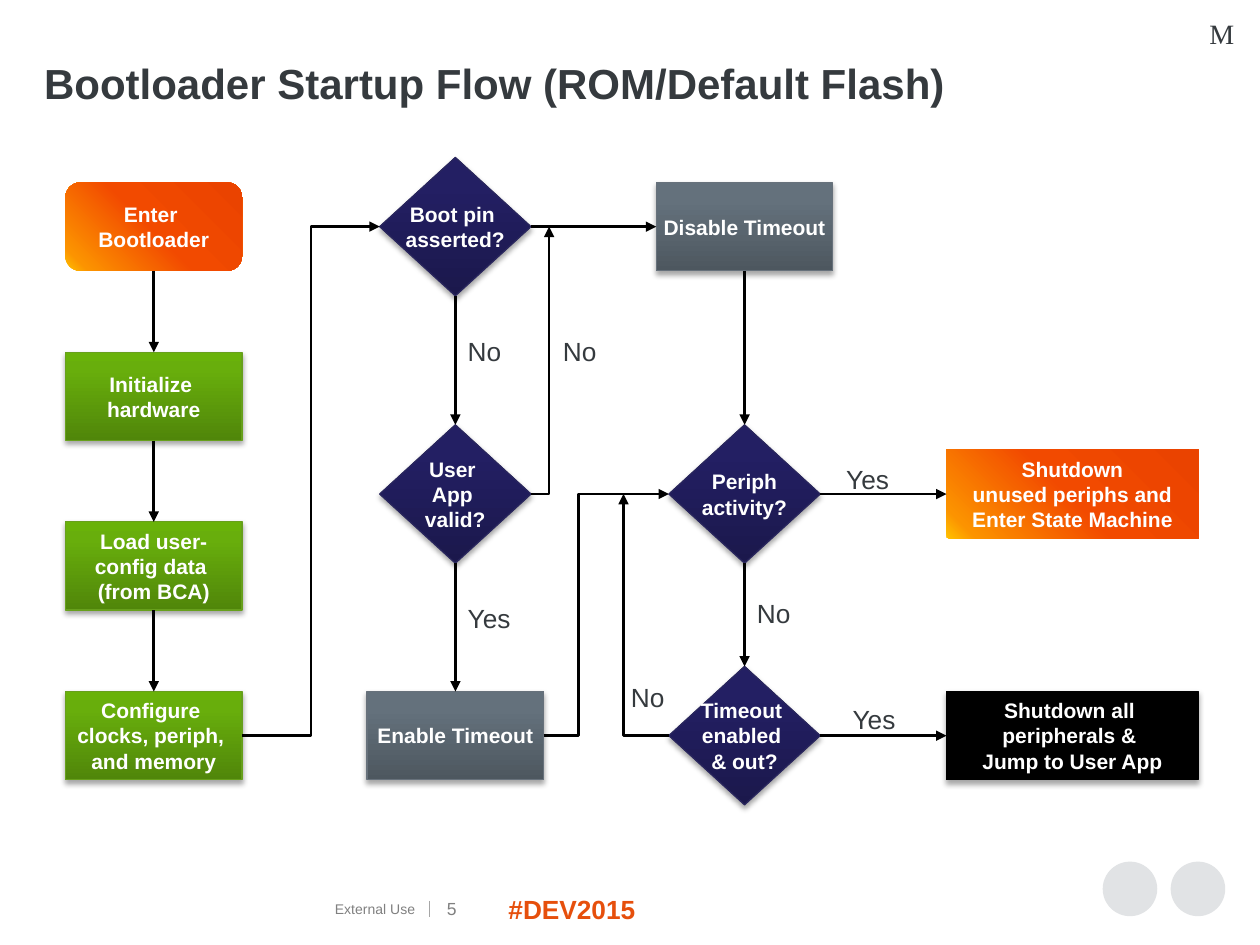
from lxml import etree
from pptx import Presentation
from pptx.dml.color import RGBColor
from pptx.enum.shapes import MSO_CONNECTOR, MSO_SHAPE
from pptx.enum.text import MSO_ANCHOR, PP_ALIGN
from pptx.oxml import parse_xml
from pptx.oxml.ns import nsdecls, qn
from pptx.util import Cm, Pt

PROCESS = MSO_SHAPE.FLOWCHART_PROCESS
DECISION = MSO_SHAPE.FLOWCHART_DECISION
START = MSO_SHAPE.FLOWCHART_ALTERNATE_PROCESS
OVAL = MSO_SHAPE.OVAL
STRAIGHT, ELBOW = MSO_CONNECTOR.STRAIGHT, MSO_CONNECTOR.ELBOW
TOP, MIDDLE = MSO_ANCHOR.TOP, MSO_ANCHOR.MIDDLE
CENTER = PP_ALIGN.CENTER
UP, LEFT, DOWN, RIGHT = range(4)

ORANGE = ([(0, "FFC000"), (9, "FC9300"), (49, "F24A00"), (100, "EA4300")], 315, None)
GREEN = ([(0, "50860A"), (80, "68AE0C"), (100, "69B209")], 270, "67A01C")
NAVY = ([(0, "1B184C"), (80, "231F63"), (100, "221E65")], 270, "29265D")
GRAY = ([(0, "4D575F"), (80, "64717C"), (100, "64717D")], 270, "67717B")
BLACK = ([(0, "000000"), (100, "000000")], 270, "000000")
INK = "353A3E"

BOX, DIAMOND, WIDE_BOX = (3.56, 1.78), (3.05, 2.79), (5.08, 1.78)
SETUP_X, PIN_X, TIMEOUT_X, END_X = 3.1, 9.18, 15.01, 21.62
TOP_Y, CHECK_Y, BOTTOM_Y = 4.57, 9.96, 14.83
SETUP_STEP = (BOTTOM_Y - TOP_Y) / 3


def color(value):
    """Turn a hex string into a colour."""
    return RGBColor.from_string(value)


def style_text(frame, text, size, ink, bold=False, font="Arial", align=None):
    """Fill a text frame and format all its runs alike."""
    frame.text = text
    for paragraph in frame.paragraphs:
        paragraph.alignment = align
        for run in paragraph.runs:
            run.font.name = font
            run.font.size = Pt(size)
            run.font.bold = bold
            run.font.color.rgb = color(ink)


def add_text(slide, text, place, size, ink=INK, bold=False, font="Arial", anchor=TOP, wrap=True):
    """Add a text box at left, top, width, height in centimetres."""
    frame = slide.shapes.add_textbox(*map(Cm, place)).text_frame
    frame.word_wrap = wrap
    frame.vertical_anchor = anchor
    style_text(frame, text, size, ink, bold, font)


def apply_gradient(node, stops, angle):
    """Give a node a linear gradient with any number of stops."""
    node.fill.background()
    marks = "".join(
        f'<a:gs pos="{position * 1000}"><a:srgbClr val="{value}"/></a:gs>'
        for position, value in stops)
    gradient = parse_xml(
        f'<a:gradFill {nsdecls("a")} rotWithShape="1"><a:gsLst>{marks}</a:gsLst>'
        f'<a:lin ang="{angle * 60000}" scaled="0"/></a:gradFill>')
    properties = node._element.spPr
    properties.replace(properties.find(qn("a:noFill")), gradient)


def apply_shadow(node):
    """Give a node a soft shadow below it."""
    node._element.spPr.find(qn("a:effectLst")).append(parse_xml(
        f'<a:outerShdw {nsdecls("a")} blurRad="40000" dist="23000" dir="5400000" '
        'rotWithShape="0"><a:srgbClr val="000000"><a:alpha val="35000"/>'
        '</a:srgbClr></a:outerShdw>'))


def add_node(slide, kind, text, center_x, center_y, size, palette):
    """Add a flowchart node around its centre."""
    width, height = size
    node = slide.shapes.add_shape(
        kind, Cm(center_x - width / 2), Cm(center_y - height / 2), Cm(width), Cm(height))
    node.shadow.inherit = False
    stops, angle, border = palette
    if border:
        node.line.color.rgb = color(border)
        node.line.width = Pt(0.75)
        apply_shadow(node)
    else:
        node.line.fill.background()
    if palette is BLACK:
        node.fill.solid()
        node.fill.fore_color.rgb = color(border)
    else:
        apply_gradient(node, stops, angle)
    frame = node.text_frame
    frame.word_wrap = False
    frame.vertical_anchor = MIDDLE
    if kind == DECISION:
        frame.margin_left = frame.margin_right = frame.margin_top = frame.margin_bottom = 0
    style_text(frame, text, 12, "FFFFFF", True, align=CENTER)
    return node


def add_line(slide, kind, ends, ink="000000", width=1.5):
    """Add a plain connector between two points in centimetres."""
    line = slide.shapes.add_connector(kind, *map(Cm, ends))
    line.line.color.rgb = color(ink)
    line.line.width = Pt(width)
    etree.SubElement(line._element.spPr, qn("a:effectLst"))
    return line


def add_arrowhead(line):
    """Put a triangle at the end of a connector."""
    etree.SubElement(line.line._get_or_add_ln(), qn("a:tailEnd"), type="triangle")


def link(slide, source, source_side, target, target_side, bend=None):
    """Join two nodes with an arrow, bent at a share of its width if given."""
    arrow = add_line(slide, STRAIGHT if bend is None else ELBOW, (0, 0, 1, 1))
    arrow.begin_connect(source, source_side)
    arrow.end_connect(target, target_side)
    if bend is not None:
        guides = arrow._element.spPr.find(qn("a:prstGeom")).get_or_add_avLst()
        etree.SubElement(guides, qn("a:gd"), name="adj1", fmla=f"val {round(bend * 100000)}")
    add_arrowhead(arrow)


def link_to_line(slide, source, side, ends):
    """Run an arrow with one corner from a node to another arrow."""
    arrow = add_line(slide, ELBOW, ends)
    arrow.begin_connect(source, side)
    arrow._element.spPr.find(qn("a:prstGeom")).set("prst", "bentConnector2")
    add_arrowhead(arrow)


def add_footer(slide):
    """Add the circles and the footer texts."""
    for left in (22.23, 23.6):
        circle = slide.shapes.add_shape(OVAL, Cm(left), Cm(17.37), Cm(1.1), Cm(1.1))
        circle.shadow.inherit = False
        circle.fill.solid()
        circle.fill.fore_color.rgb = color("E1E3E5")
        circle.line.fill.background()
    add_text(slide, "External Use", (6.5, 18.03, 11.18, 0.6), 8, "808080")
    add_text(slide, "5", (8.76, 17.81, 0.84, 1.02), 10, "808080", anchor=MIDDLE)
    add_line(slide, STRAIGHT, (8.66, 18.16, 8.66, 18.49), "A6A6A6", 0.75)
    add_text(slide, "#DEV2015", (10, 17.88, 11.18, 0.89), 15, "E64F0C", True)


def add_flow(slide):
    """Add the nodes, arrows and answers of the startup flow."""
    setup_steps = [
        (START, "Enter \nBootloader", ORANGE),
        (PROCESS, "Initialize \nhardware", GREEN),
        (PROCESS, "Load user-\nconfig data \n(from BCA)", GREEN),
        (PROCESS, "Configure \nclocks, periph, \nand memory", GREEN),
    ]
    setup = [add_node(slide, kind, text, SETUP_X, TOP_Y + row * SETUP_STEP, BOX, palette)
             for row, (kind, text, palette) in enumerate(setup_steps)]
    boot_pin = add_node(slide, DECISION, "Boot pin \nasserted?", PIN_X, TOP_Y, DIAMOND, NAVY)
    user_app = add_node(slide, DECISION, "User \nApp \nvalid?", PIN_X, CHECK_Y, DIAMOND, NAVY)
    enable = add_node(slide, PROCESS, "Enable Timeout", PIN_X, BOTTOM_Y, BOX, GRAY)
    disable = add_node(slide, PROCESS, "Disable Timeout", TIMEOUT_X, TOP_Y, BOX, GRAY)
    periph = add_node(slide, DECISION, "Periph\nactivity?", TIMEOUT_X, CHECK_Y, DIAMOND, NAVY)
    timeout = add_node(slide, DECISION, "Timeout \nenabled \n& out?",
                       TIMEOUT_X, BOTTOM_Y, DIAMOND, NAVY)
    jump = add_node(slide, PROCESS, "Shutdown all \nperipherals & \nJump to User App",
                    END_X, BOTTOM_Y, WIDE_BOX, BLACK)
    state_machine = add_node(slide, PROCESS, "Shutdown\nunused periphs and\nEnter State Machine",
                             END_X, CHECK_Y, WIDE_BOX, ORANGE)

    downward = [*zip(setup, setup[1:]), (boot_pin, user_app), (user_app, enable),
                (disable, periph), (periph, timeout)]
    for upper, lower in downward:
        link(slide, upper, DOWN, lower, UP)
    for before, after in ((boot_pin, disable), (periph, state_machine), (timeout, jump)):
        link(slide, before, RIGHT, after, LEFT)
    link(slide, setup[-1], RIGHT, boot_pin, LEFT, 0.5)
    link(slide, enable, RIGHT, periph, LEFT, 0.28)
    link_to_line(slide, user_app, RIGHT, (10.7, CHECK_Y, 11.07, TOP_Y))
    link_to_line(slide, timeout, LEFT, (13.49, BOTTOM_Y, 12.57, CHECK_Y))

    answers = [("No", PIN_X, 6.63), ("Yes", PIN_X, 12.01), ("No", 11.1, 6.63),
               ("No", TIMEOUT_X, 11.91), ("Yes", 16.81, 9.22), ("Yes", 16.94, 14.05),
               ("No", 12.47, 13.61)]
    for answer, left, top in answers:
        add_text(slide, answer, (left, top, 1.7, 1.27), 15, wrap=False)


def main():
    """Build the slide and save it."""
    deck = Presentation()
    deck.slide_width, deck.slide_height = Cm(25.4), Cm(19.05)
    slide = deck.slides.add_slide(deck.slide_layouts[6])
    add_footer(slide)
    add_text(slide, "Bootloader Startup Flow (ROM/Default Flash)",
             (0.64, 0.76, 24.31, 1.83), 24, bold=True, anchor=MIDDLE)
    add_flow(slide)
    add_text(slide, "M", (24.13, 0.2, 1.47, 0.91), 16, font="Times New Roman")
    deck.save("out.pptx")


if __name__ == "__main__":
    main()
